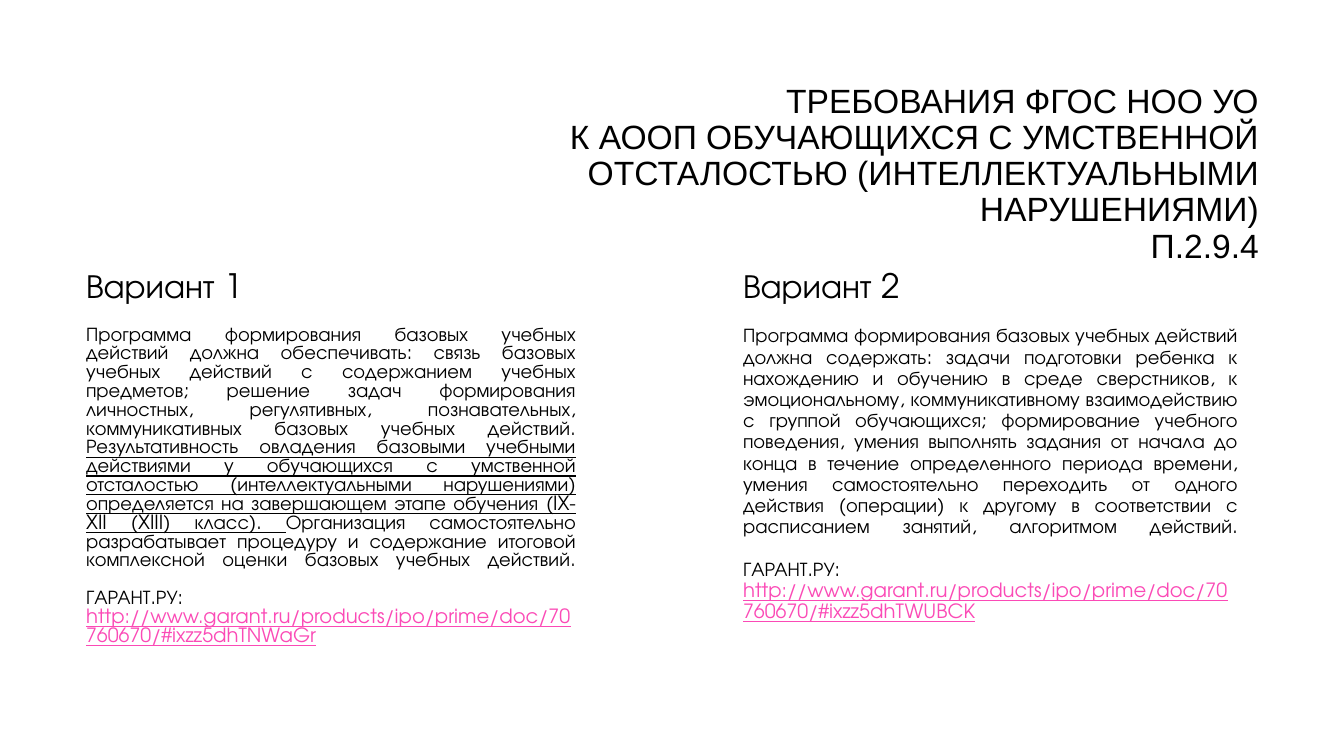
import copy

import pptx
import pptx.dml.color
import pptx.enum.text
import pptx.oxml
import pptx.oxml.ns
import pptx.util

ALIGN = pptx.enum.text.PP_ALIGN
ANCHOR = pptx.enum.text.MSO_ANCHOR
EMU_PER_PX = 914400 / 100.8
BLACK, WHITE, PINK = "000000", "FFFFFF", "FB4AB6"


def px(length):
    return pptx.util.Emu(round(length * EMU_PER_PX))


def color(value):
    return pptx.dml.color.RGBColor.from_string(value)


def apply(target, values):
    for name, value in values.items():
        setattr(target, name, value)


class SlideBuilder:
    heading_font = "Arial"
    body_font = "TeX Gyre Adventor"
    heading_size = 24
    body_size = 14

    def __init__(self, presentation):
        self.slide = presentation.slides.add_slide(presentation.slide_layouts[4])
        self.placeholders = {
            shape.placeholder_format.idx: shape for shape in self.slide.placeholders
        }

    def place(self, index, box, anchor, **frame_values):
        shape = self.placeholders[index]
        apply(shape, dict(zip(("left", "top", "width", "height"), map(px, box))))
        frame = {
            "word_wrap": True,
            "auto_size": pptx.enum.text.MSO_AUTO_SIZE.NONE,
            "vertical_anchor": anchor,
        }
        apply(shape.text_frame, {**frame, **frame_values})
        return shape

    def fill_text(self, shape, runs, font, size, **paragraph_values):
        paragraph = shape.text_frame.paragraphs[0]
        properties = paragraph._p.get_or_add_pPr()
        for name in ("marL", "indent"):
            properties.set(name, "0")
        properties.append(pptx.oxml.parse_xml(
            f'<a:buNone {pptx.oxml.ns.nsdecls("a")}/>'))
        apply(paragraph, {"space_before": pptx.util.Pt(0), **paragraph_values})
        for text, run_color, underline in runs:
            values = {"name": font, "size": pptx.util.Pt(size),
                      "bold": False, "underline": underline}
            for number, line in enumerate(text.split("\n")):
                if number:
                    paragraph.add_line_break()
                    line_break = paragraph._p.findall(pptx.oxml.ns.qn("a:br"))[-1]
                    line_break.append(copy.deepcopy(run_properties))
                if line:
                    run = paragraph.add_run()
                    run.text = line
                    apply(run.font, values)
                    run.font.color.rgb = color(run_color)
                    run_properties = run._r.get_or_add_rPr()

    def title(self, text, box):
        shape = self.place(0, box, ANCHOR.TOP, margin_top=0)
        self.fill_text(shape, [(text, BLACK, False)], self.heading_font,
                       self.heading_size, alignment=ALIGN.RIGHT, line_spacing=0.9)

    def heading(self, index, text, box):
        shape = self.place(index, box, ANCHOR.BOTTOM)
        self.fill_text(shape, [(text, BLACK, False)], self.body_font,
                       self.heading_size, alignment=ALIGN.LEFT, line_spacing=0.9)

    def body(self, index, runs, box, line_spacing):
        shape = self.place(index, box, ANCHOR.TOP)
        shape.fill.solid()
        shape.fill.fore_color.rgb = color(WHITE)
        self.fill_text(shape, runs, self.body_font, self.body_size,
                       alignment=ALIGN.JUSTIFY, line_spacing=line_spacing)


TITLE = (
    "ТРЕБОВАНИЯ ФГОС НОО УО\n"
    "К АООП ОБУЧАЮЩИХСЯ С УМСТВЕННОЙ ОТСТАЛОСТЬЮ "
    "(ИНТЕЛЛЕКТУАЛЬНЫМИ НАРУШЕНИЯМИ)\n"
    "П.2.9.4"
)
SOURCE_LABEL = "\n\nГАРАНТ.РУ: "
SOURCE_ADDRESS = "http://www.garant.ru/products/ipo/prime/doc/70760670/#"

FIRST_VARIANT = [
    ("Программа формирования базовых учебных действий должна обеспечивать: "
     "связь базовых учебных действий с содержанием учебных предметов; решение "
     "задач формирования личностных, регулятивных, познавательных, "
     "коммуникативных базовых учебных действий. ", BLACK, False),
    ("Результативность овладения базовыми учебными действиями у обучающихся "
     "с умственной отсталостью (интеллектуальными нарушениями) определяется "
     "на завершающем этапе обучения (IX-XII (XIII) класс). ", BLACK, True),
    ("Организация самостоятельно разрабатывает процедуру и содержание "
     "итоговой комплексной оценки базовых учебных действий."
     + SOURCE_LABEL, BLACK, False),
    (SOURCE_ADDRESS + "ixzz5dhTNWaGr", PINK, True),
]
SECOND_VARIANT = [
    ("Программа формирования базовых учебных действий должна содержать: "
     "задачи подготовки ребенка к нахождению и обучению в среде сверстников, "
     "к эмоциональному, коммуникативному взаимодействию с группой "
     "обучающихся; формирование учебного поведения, умения выполнять задания "
     "от начала до конца в течение определенного периода времени, умения "
     "самостоятельно переходить от одного действия (операции) к другому в "
     "соответствии с расписанием занятий, алгоритмом действий."
     + SOURCE_LABEL, BLACK, False),
    (SOURCE_ADDRESS + "ixzz5dhTWUBCK", PINK, True),
]


def main():
    presentation = pptx.Presentation()
    apply(presentation, {"slide_width": px(1344), "slide_height": px(756)})
    builder = SlideBuilder(presentation)
    builder.title(TITLE, (320, 84, 949, 144))
    columns = [
        ("Вариант 1", FIRST_VARIANT, 76, 510, 0.8),
        ("Вариант 2", SECOND_VARIANT, 733, 515, 0.9),
    ]
    for number, (heading, runs, left, width, line_spacing) in enumerate(columns):
        builder.heading(1 + 2 * number, heading, (left, 242, 381, 69))
        builder.body(2 + 2 * number, runs, (left, 321, width, 365), line_spacing)
    presentation.save("out.pptx")


if __name__ == "__main__":
    main()
